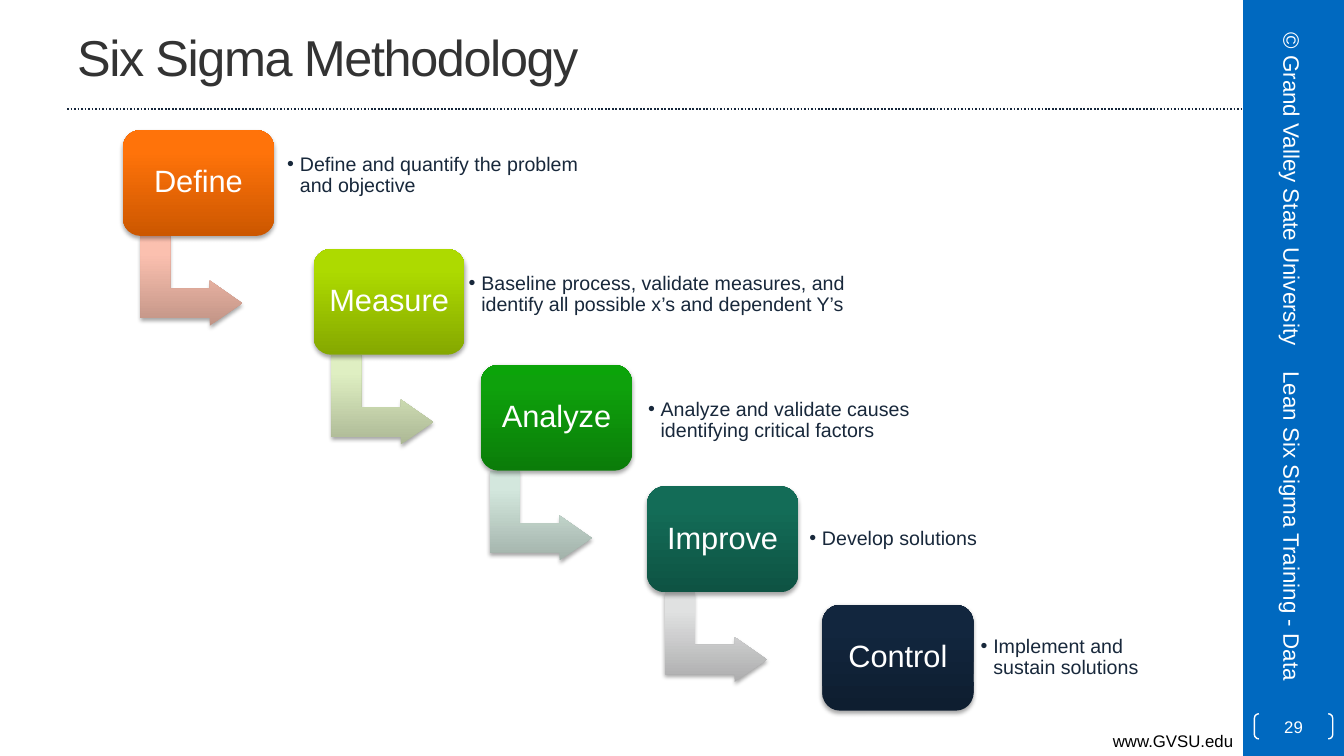
from copy import deepcopy
from dataclasses import dataclass

from lxml import etree
from pptx import Presentation
from pptx.dml.color import RGBColor
from pptx.enum.dml import MSO_LINE
from pptx.enum.shapes import MSO_CONNECTOR, MSO_SHAPE
from pptx.enum.text import MSO_ANCHOR, PP_ALIGN
from pptx.oxml.ns import qn
from pptx.util import Pt

ROUNDED, BENT_ARROW = MSO_SHAPE.ROUNDED_RECTANGLE, MSO_SHAPE.BENT_UP_ARROW
RECTANGLE, BRACKETS = MSO_SHAPE.RECTANGLE, MSO_SHAPE.DOUBLE_BRACKET
STRAIGHT = MSO_CONNECTOR.STRAIGHT
DOTTED = MSO_LINE.ROUND_DOT
MIDDLE, TOP = MSO_ANCHOR.MIDDLE, MSO_ANCHOR.TOP
LEFT, CENTER, RIGHT = PP_ALIGN.LEFT, PP_ALIGN.CENTER, PP_ALIGN.RIGHT

WHITE = RGBColor(0xFF, 0xFF, 0xFF)
BLACK = RGBColor(0, 0, 0)
TITLE_GRAY = RGBColor(0x33, 0x33, 0x33)
NAVY = RGBColor(0x18, 0x28, 0x3B)
RULE_NAVY = RGBColor(0x17, 0x27, 0x3B)
SIDEBAR_BLUE = RGBColor(0x00, 0x69, 0xC0)

SLIDE_W, SLIDE_H = 960, 540
SIDEBAR_W = 72
MAIN_W = SLIDE_W - SIDEBAR_W
RULE_Y = 77.8
STEP_W, STEP_H = 108, 75.6
ARROW_W, ARROW_H = 64.1, 72.7
ARROW_DROP = 71.3
STOPS = (0, 0.8, 1)


@dataclass
class Step:
    name: str
    detail: str
    box: tuple
    detail_box: tuple
    shades: tuple
    arrow_indent: float = 0
    arrow_shades: tuple = ()


STEPS = [
    Step("Define", "Define and quantify the problem and objective",
         (87.8, 92.9), (200.9, 95.8, 226.1, 59), ("CC5700", "FF730A", "FF730B"),
         16.8, ("C19486", "FBC0AF", "FDC0AE")),
    Step("Measure", "Baseline process, validate measures, and identify all possible x’s and dependent Y’s",
         (224, 177.8), (330.5, 180, 317.5, 61.2), ("85A800", "ADDA00", "AEDC00"),
         17, ("ACB895", "DFEFC2", "E0F1C2")),
    Step("Analyze", "Analyze and validate causes identifying critical factors",
         (343.5, 260.6), (458.6, 270, 254.9, 61.2), ("0B7C09", "0EA10C", "0BA409"),
         10.8, ("A2B2AA", "D3E7DD", "D3E8DE")),
    Step("Improve", "Develop solutions",
         (462.2, 347.4), (573.8, 354.2, 168.5, 61.2), ("0E5343", "136C57", "116E58"),
         17.2, ("ADADAE", "E0E1E1", "E1E2E2")),
    Step("Control", "Implement and sustain solutions",
         (587.4, 432), (696.2, 435.6, 156.2, 68.4), ("0E1E30", "12263E", "11263F")),
]


def points(box):
    return [Pt(length) for length in box]


def write(shape, text, size, color, align=LEFT, anchor=MIDDLE, inset=None):
    frame = shape.text_frame
    frame.word_wrap = True
    frame.vertical_anchor = anchor
    if inset is not None:
        frame.margin_left = frame.margin_right = Pt(inset)
        frame.margin_top = frame.margin_bottom = Pt(inset)
    frame.text = text
    paragraph = frame.paragraphs[0]
    paragraph.alignment = align
    font = paragraph.runs[0].font
    font.name, font.size = "Arial", Pt(size)
    font.color.rgb = color
    return paragraph


def add_label(slide, box, text, size, color, **layout):
    label = slide.shapes.add_textbox(*points(box))
    return label, write(label, text, size, color, **layout)


def add_shaded(slide, preset, box, shades):
    shape = slide.shapes.add_shape(preset, *points(box))
    shape.line.fill.background()
    fill = shape.fill
    fill.gradient()
    fill.gradient_angle = 90
    properties = shape.element.spPr
    gradient = properties.find(qn("a:gradFill"))
    gradient.set("rotWithShape", "0")
    stop_list = gradient.find(qn("a:gsLst"))
    stop_list.append(deepcopy(stop_list[-1]))
    for stop, position, shade in zip(fill.gradient_stops, STOPS, shades):
        stop.position = position
        stop.color.rgb = RGBColor.from_string(shade)
    effects = etree.SubElement(properties, qn("a:effectLst"))
    shadow = etree.SubElement(effects, qn("a:outerShdw"), blurRad=str(Pt(3.1)),
                              dist=str(Pt(1.8)), dir="5400000", rotWithShape="0")
    tint = etree.SubElement(shadow, qn("a:srgbClr"), val="000000")
    etree.SubElement(tint, qn("a:alpha"), val="35000")
    return shape


def add_step(slide, step):
    left, top = step.box
    if step.arrow_shades:
        arrow_box = (left + step.arrow_indent, top + ARROW_DROP, ARROW_W, ARROW_H)
        arrow = add_shaded(slide, BENT_ARROW, arrow_box, step.arrow_shades)
        arrow.rotation = 90
        for index, ratio in enumerate((0.33, 0.25, 0.36)):
            arrow.adjustments[index] = ratio
    tile = add_shaded(slide, ROUNDED, (left, top, STEP_W, STEP_H), step.shades)
    write(tile, step.name, 22, WHITE, align=CENTER, inset=6.5).line_spacing = 0.9
    _, detail = add_label(slide, step.detail_box, step.detail, 14, NAVY, inset=4.3)
    detail.level = 1
    detail.line_spacing = 0.9
    properties = detail._p.get_or_add_pPr()
    properties.set("marL", str(Pt(9)))
    properties.set("indent", str(Pt(-9)))
    etree.SubElement(properties, qn("a:buFont"), typeface="Arial")
    etree.SubElement(properties, qn("a:buChar"), char="•")


def add_header(slide, left, top, width, height):
    _, title = add_label(slide, (left, top, width, height), "Six Sigma Methodology", 36, TITLE_GRAY)
    title.runs[0].font._element.set("spc", "-100")
    rule = slide.shapes.add_connector(STRAIGHT, *points((left, RULE_Y, MAIN_W, RULE_Y)))
    rule.line.color.rgb = RULE_NAVY
    rule.line.width = Pt(1.25)
    rule.line.dash_style = DOTTED
    etree.SubElement(rule.element.spPr, qn("a:effectLst"))


def add_sidebar(slide, left, top, width, height):
    band = slide.shapes.add_shape(RECTANGLE, *points((left, top, width, height)))
    band.shadow.inherit = False
    band.fill.solid()
    band.fill.fore_color.rgb = SIDEBAR_BLUE
    band.line.fill.background()
    length, thickness = 246.2, 38.2
    for text, label_top, align in (
        ("© Grand Valley State University", 115.9, CENTER),
        ("Lean Six Sigma Training - Data", 362.2, LEFT),
    ):
        label_box = (left - 88, top + label_top, length, thickness)
        label, _ = add_label(slide, label_box, text, 16, WHITE, align=align)
        label.rotation = 90
    number = slide.shapes.add_shape(BRACKETS, *points((left + 8, top + 509.8, width - 16, 18)))
    number.shadow.inherit = False
    number.adjustments[0] = 0.18
    number.fill.background()
    number.line.color.rgb = WHITE
    number.line.width = Pt(1)
    write(number, "29", 12, WHITE, align=CENTER, inset=0)


def main():
    presentation = Presentation()
    presentation.slide_width, presentation.slide_height = Pt(SLIDE_W), Pt(SLIDE_H)
    slide = presentation.slides.add_slide(presentation.slide_layouts[6])
    add_label(slide, (0, 518.4, MAIN_W, 21.6), "www.GVSU.edu", 12, BLACK, align=RIGHT, anchor=TOP)
    add_header(slide, 48, 2.2, 800, 75.6)
    for step in STEPS:
        add_step(slide, step)
    add_sidebar(slide, MAIN_W, 0, SIDEBAR_W, SLIDE_H)
    presentation.save("out.pptx")


if __name__ == "__main__":
    main()
